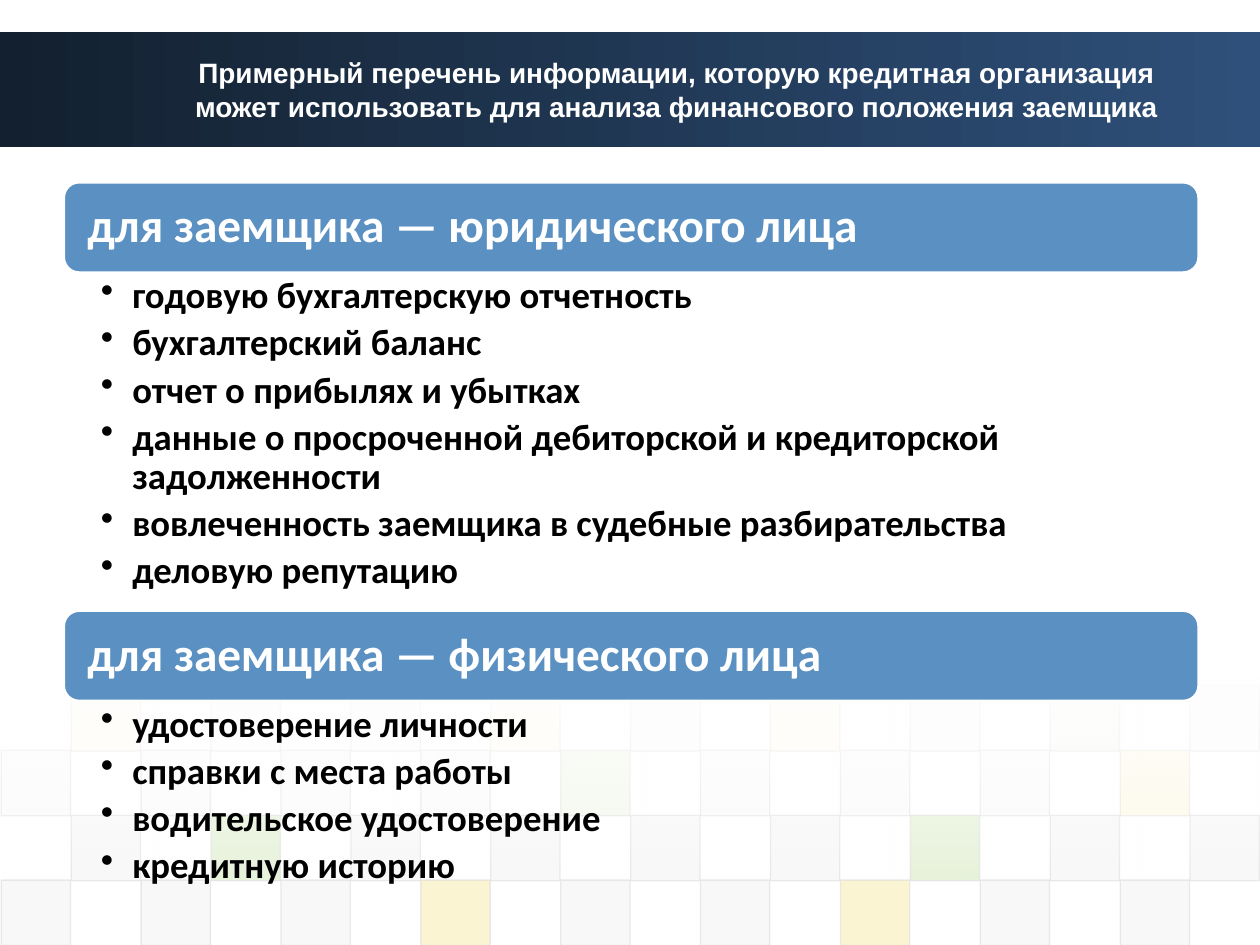
from lxml.etree import SubElement
from pptx import Presentation
from pptx.dml.color import RGBColor
from pptx.enum.shapes import MSO_SHAPE
from pptx.enum.text import MSO_ANCHOR, PP_ALIGN
from pptx.oxml.ns import qn
from pptx.util import Inches, Pt

TITLE = ("Примерный перечень информации, которую кредитная организация "
         "может использовать для анализа финансового положения заемщика")
GROUPS = [
    (1.45, 2.69, "для заемщика — юридического лица", [
        "годовую бухгалтерскую отчетность",
        "бухгалтерский баланс",
        "отчет о прибылях и убытках",
        "данные о просроченной дебиторской и кредиторской задолженности",
        "вовлеченность заемщика в судебные разбирательства",
        "деловую репутацию"]),
    (4.85, 1.59, "для заемщика — физического лица", [
        "удостоверение личности",
        "справки с места работы",
        "водительское удостоверение",
        "кредитную историю"]),
]
TINTS = {"D": "DDDDDD", "E": "EAEAEA", "G": "8AC246", "Y": "EFC821"}
MOSAIC = [
    (1, 5, "YEEYDYEGE"),
    (0, 10, "DDDDGDDDY"),
    (1, 20, "DGDDDDGDD"),
    (0, 20, "DDDYDDYDD"),
]


def paint(color, code):
    color.rgb = RGBColor.from_string(code)


def fade(node, alpha):
    for color in node.iter(qn("a:srgbClr")):
        SubElement(color, qn("a:alpha"), val=str(alpha * 1000))


def add_block(slide, kind, x, y, w, h):
    shape = slide.shapes.add_shape(
        kind, Inches(x), Inches(y), Inches(w), Inches(h))
    shape.shadow.inherit = False
    return shape


def add_blend(slide, y, h, angle, stops):
    shape = add_block(slide, MSO_SHAPE.RECTANGLE, 0, y, 10, h)
    shape.line.fill.background()
    shape.fill.gradient()
    shape.fill.gradient_angle = angle
    nodes = shape._element.spPr.iter(qn("a:gs"))
    for stop, node, (code, alpha) in zip(
            shape.fill.gradient_stops, nodes, stops):
        paint(stop.color, code)
        fade(node, alpha)


def add_tile(slide, x, y, code, alpha):
    tile = add_block(slide, MSO_SHAPE.RECTANGLE, x, y, 0.55, 0.52)
    tile.fill.solid()
    paint(tile.fill.fore_color, code)
    paint(tile.line.color, TINTS["D"])
    tile.line.width = Pt(0.75)
    props = tile._element.spPr
    fade(props.find(qn("a:solidFill")), alpha)
    fade(props.find(qn("a:ln")), 60)


def add_mosaic(slide):
    for row, (start, alpha, keys) in enumerate(MOSAIC):
        for col, key in enumerate(keys):
            add_tile(slide, 0.01 + 0.555 * (start + 2 * col),
                     5.44 + 0.515 * row, TINTS[key], alpha)


def set_frame(shape, left, top, right, anchor):
    frame = shape.text_frame
    frame.word_wrap = True
    frame.vertical_anchor = anchor
    frame.margin_left, frame.margin_right = Inches(left), Inches(right)
    frame.margin_top = frame.margin_bottom = Inches(top)
    return frame


def write(para, text, size, code, face="Calibri"):
    para.text = text
    para.font.name = face
    para.font.size = Pt(size)
    para.font.bold = True
    paint(para.font.color, code)


def add_box(slide, x, y, w, h):
    return slide.shapes.add_textbox(
        Inches(x), Inches(y), Inches(w), Inches(h))


def add_title(slide):
    box = add_box(slide, 1.33, 0.25, 8.08, 0.92)
    para = set_frame(box, 0.1, 0.05, 0.1, MSO_ANCHOR.MIDDLE).paragraphs[0]
    para.alignment = PP_ALIGN.CENTER
    write(para, TITLE, 16, "FFFFFF", "Arial")


def add_head(slide, y, text):
    bar = add_block(slide, MSO_SHAPE.ROUNDED_RECTANGLE, 0.51, y, 9, 0.71)
    bar.fill.solid()
    paint(bar.fill.fore_color, "5A90C2")
    paint(bar.line.color, "FFFFFF")
    bar.line.width = Pt(1)
    para = set_frame(bar, 0.15, 0.11, 0.15, MSO_ANCHOR.MIDDLE).paragraphs[0]
    para.alignment = PP_ALIGN.LEFT
    para.line_spacing = 0.9
    write(para, text, 27, "FFFFFF")


def add_list(slide, y, h, items):
    box = add_box(slide, 0.51, y, 9, h)
    frame = set_frame(box, 0.29, 0.04, 0.21, MSO_ANCHOR.TOP)
    for index, item in enumerate(items):
        para = frame.add_paragraph() if index else frame.paragraphs[0]
        para.level = 1
        para.line_spacing = 0.9
        para.space_after = Pt(4.2)
        props = para._p.get_or_add_pPr()
        props.set("marL", str(Inches(0.25)))
        props.set("indent", str(Inches(-0.25)))
        SubElement(props, qn("a:buChar"), char="•")
        write(para, item, 21, "000000")


def main():
    deck = Presentation()
    deck.slide_width, deck.slide_height = Inches(10), Inches(7.5)
    slide = deck.slides.add_slide(deck.slide_layouts[6])
    add_blend(slide, 0.25, 0.92, 0, [("13202F", 100), ("2E507A", 100)])
    add_mosaic(slide)
    add_blend(slide, 5.37, 1.62, 270, [("FFFFFF", 90), ("FFFFFF", 0)])
    add_title(slide)
    for y, h, head, items in GROUPS:
        add_head(slide, y, head)
        add_list(slide, y + 0.71, h, items)
    deck.save("out.pptx")


if __name__ == "__main__":
    main()
